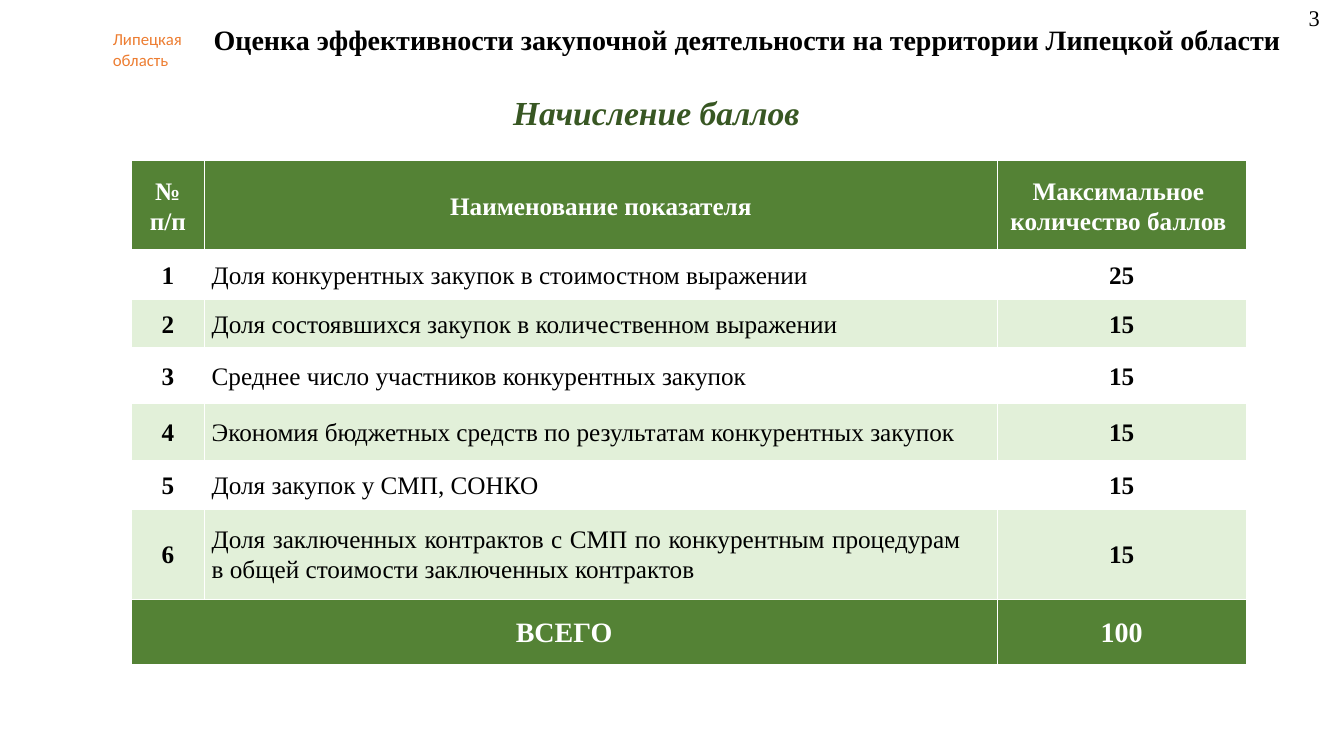
from dataclasses import dataclass

import pptx
import pptx.dml.color
import pptx.enum.text
import pptx.oxml
import pptx.oxml.ns
import pptx.util
from pptx.util import Inches

COLORS = {
    "white": "FFFFFF",
    "black": "000000",
    "orange": "ED7D31",
    "heading": "385723",
    "green": "548235",
    "pale": "E2F0D9",
}
SERIF = "Times New Roman"
ALIGN = pptx.enum.text.PP_ALIGN


@dataclass
class Label:
    lines: list[str]
    left: float
    top: float
    width: float
    height: float
    size: int
    color: str = "black"
    font: str = SERIF
    bold: bool = False
    italic: bool = False
    wrap: bool = True


@dataclass
class Indicator:
    name: str
    points: int
    height: float
    right_inset: float = 0.07


@dataclass
class CellStyle:
    fill: str
    color: str
    size: int = 18
    bottom_border: int = 1


LABELS = [
    Label(["Липецкая", "область"], 1.02, 0.24, 0.91, 0.5, 12, "orange", "Calibri"),
    Label(["Оценка эффективности закупочной деятельности на территории Липецкой области"],
          2.02, 0.17, 11.09, 0.44, 20, bold=True),
    Label(["3"], 12.88, -0.01, 0.46, 0.37, 16),
    Label(["Начисление баллов"], 4.99, 0.86, 3.07, 0.5, 24, "heading",
          bold=True, italic=True, wrap=False),
]
INDICATORS = [
    Indicator("Доля конкурентных закупок в стоимостном выражении", 25, 0.48),
    Indicator("Доля состоявшихся закупок в количественном выражении", 15, 0.48),
    Indicator("Среднее число участников конкурентных закупок", 15, 0.55),
    Indicator("Экономия бюджетных средств по результатам конкурентных закупок", 15, 0.57),
    Indicator("Доля закупок у СМП, СОНКО", 15, 0.48),
    Indicator("Доля заключенных контрактов с СМП по конкурентным процедурам "
              "в общей стоимости заключенных контрактов", 15, 0.9, 0.36),
]
HEADERS = ["№ п/п", "Наименование показателя", "Максимальное \nколичество баллов "]
COLUMN_WIDTHS = [0.73, 7.86, 2.47]
ROW_HEIGHTS = [0.9, *(i.height for i in INDICATORS), 0.64]

HEADER = CellStyle("green", "white", bottom_border=3)
TOTAL = CellStyle("green", "white", size=20)
BODY = [CellStyle("white", "black"), CellStyle("pale", "black")]


def rgb(name: str) -> pptx.dml.color.RGBColor:
    return pptx.dml.color.RGBColor.from_string(COLORS[name])


def style_font(p, size: int, color: str, font: str = SERIF,
               bold: bool = False, italic: bool = False) -> None:
    p.font.size = pptx.util.Pt(size)
    p.font.name = font
    p.font.bold = bold
    p.font.italic = italic
    p.font.color.rgb = rgb(color)


def add_label(s, label: Label) -> None:
    box = s.shapes.add_textbox(Inches(label.left), Inches(label.top),
                               Inches(label.width), Inches(label.height))
    tf = box.text_frame
    tf.word_wrap = label.wrap
    tf.auto_size = pptx.enum.text.MSO_AUTO_SIZE.SHAPE_TO_FIT_TEXT
    tf.text = "\n".join(label.lines)
    for p in tf.paragraphs:
        style_font(p, label.size, label.color, label.font, label.bold, label.italic)


def set_borders(cell, bottom: int) -> None:
    """Draw white borders, which precede the fill in the cell properties."""
    tc_pr = cell._tc.get_or_add_tcPr()
    for i, side in enumerate("LRTB"):
        width = pptx.util.Pt(bottom if side == "B" else 1)
        tc_pr.insert(i, pptx.oxml.parse_xml(
            f'<a:ln{side} {pptx.oxml.ns.nsdecls("a")} w="{width}"><a:solidFill>'
            f'<a:srgbClr val="{COLORS["white"]}"/></a:solidFill></a:ln{side}>'))


def fill_cell(cell, text: str, style: CellStyle, bold: bool = True,
              align: ALIGN = ALIGN.CENTER, right_inset: float = 0.07) -> None:
    cell.text = text
    cell.vertical_anchor = pptx.enum.text.MSO_ANCHOR.MIDDLE
    cell.margin_left = Inches(0.07)
    cell.margin_right = Inches(right_inset)
    cell.margin_top = cell.margin_bottom = 0
    cell.fill.solid()
    cell.fill.fore_color.rgb = rgb(style.fill)
    set_borders(cell, style.bottom_border)
    for p in cell.text_frame.paragraphs:
        p.alignment = align
        p.line_spacing = 1.07
        style_font(p, style.size, style.color, bold=bold)


def add_score_table(s) -> None:
    table = s.shapes.add_table(
        len(ROW_HEIGHTS), len(COLUMN_WIDTHS), Inches(1.3), Inches(1.59),
        Inches(sum(COLUMN_WIDTHS)), Inches(sum(ROW_HEIGHTS))).table
    for column, width in zip(table.columns, COLUMN_WIDTHS):
        column.width = Inches(width)
    for row, height in zip(table.rows, ROW_HEIGHTS):
        row.height = Inches(height)

    for col, header in enumerate(HEADERS):
        fill_cell(table.cell(0, col), header, HEADER)
    for number, indicator in enumerate(INDICATORS, start=1):
        style = BODY[(number - 1) % 2]
        fill_cell(table.cell(number, 0), str(number), style)
        fill_cell(table.cell(number, 1), indicator.name, style, bold=False,
                  align=ALIGN.JUSTIFY, right_inset=indicator.right_inset)
        fill_cell(table.cell(number, 2), str(indicator.points), style)

    last = len(ROW_HEIGHTS) - 1
    table.cell(last, 0).merge(table.cell(last, 1))
    fill_cell(table.cell(last, 0), "ВСЕГО", TOTAL)
    fill_cell(table.cell(last, 2), str(sum(i.points for i in INDICATORS)), TOTAL)


def main() -> None:
    prs = pptx.Presentation()
    prs.slide_width = Inches(13.33)
    prs.slide_height = Inches(7.5)
    s = prs.slides.add_slide(prs.slide_layouts[6])
    for label in LABELS:
        add_label(s, label)
    add_score_table(s)
    prs.save("out.pptx")


if __name__ == "__main__":
    main()
